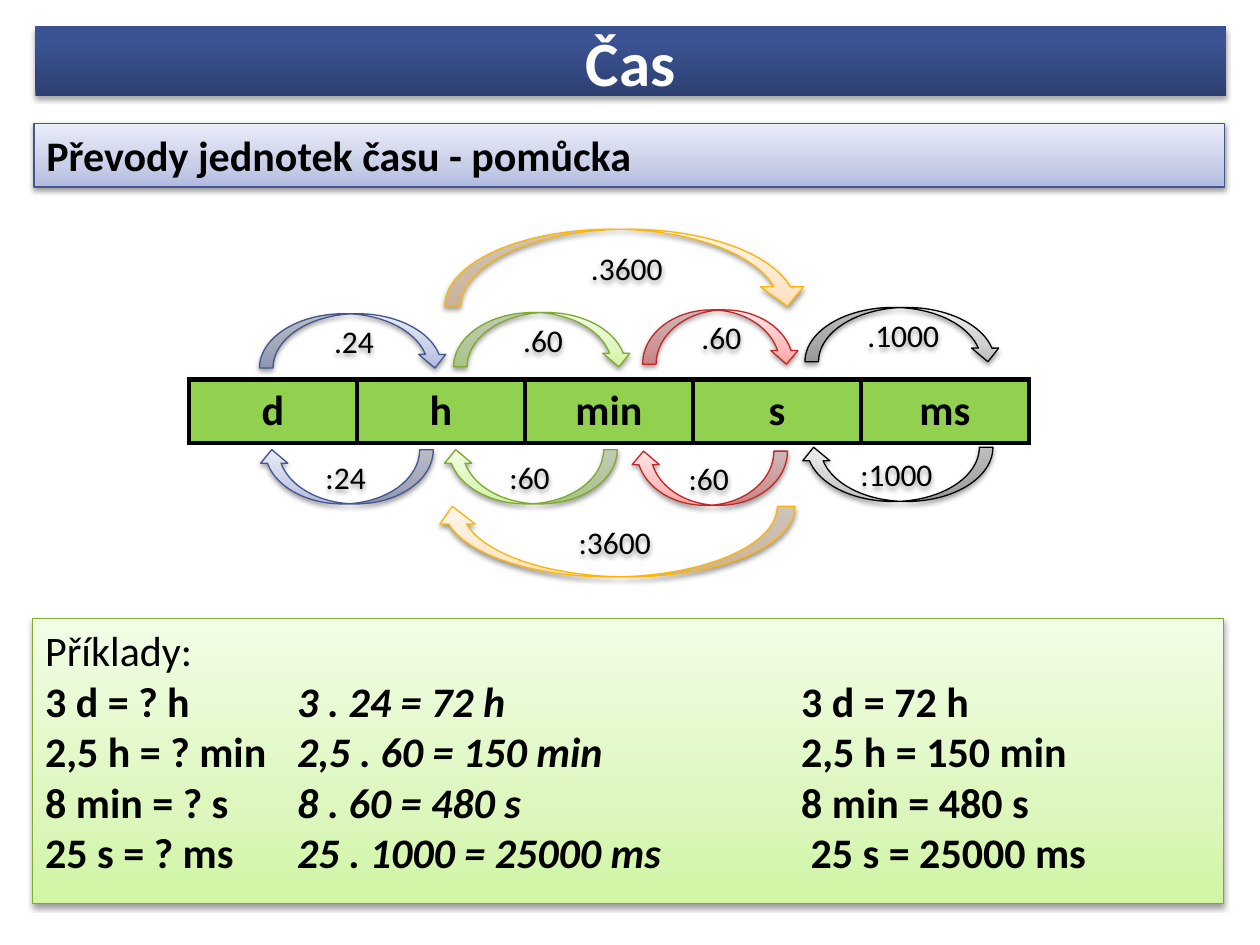
from copy import deepcopy

from lxml import etree
from pptx import Presentation
from pptx.dml.color import RGBColor
from pptx.enum.shapes import MSO_SHAPE
from pptx.enum.text import MSO_ANCHOR, PP_ALIGN
from pptx.oxml.ns import qn
from pptx.util import Pt

RECTANGLE = MSO_SHAPE.RECTANGLE
DOWN_ARROW = MSO_SHAPE.CURVED_DOWN_ARROW
UP_ARROW = MSO_SHAPE.CURVED_UP_ARROW
TOP, MIDDLE = MSO_ANCHOR.TOP, MSO_ANCHOR.MIDDLE
LEFT, CENTER = PP_ALIGN.LEFT, PP_ALIGN.CENTER

FONT = "Calibri"
BLACK = RGBColor(0x00, 0x00, 0x00)
WHITE = RGBColor(0xFF, 0xFF, 0xFF)
CELL_GREEN = RGBColor(0x92, 0xD0, 0x50)
BLUE_LINE = RGBColor(0x44, 0x57, 0x8C)
GREEN_LINE = RGBColor(0x82, 0xA9, 0x2F)
RED_LINE = RGBColor(0xC2, 0x28, 0x29)
ORANGE_LINE = RGBColor(0xFE, 0xB6, 0x04)


def gradient(middle, *colors):
    positions = (0, middle, 1)
    return [(p, RGBColor.from_string(c)) for p, c in zip(positions, colors)]


NAVY = gradient(0.8, "2D4071", "3B5393", "395295"), None
BLUE = gradient(0.35, "B2BBE0", "C9CFE8", "EAECF7"), BLUE_LINE
GREEN = gradient(0.35, "D0F5A3", "DDF7BF", "F2FDE6"), GREEN_LINE
RED = gradient(0.35, "FFA3A3", "FFBEBE", "FFE6E6"), RED_LINE
GRAY = gradient(0.35, "BDBDBD", "D1D1D1", "EEEEEE"), BLACK
ORANGE = gradient(0.35, "FFDFBC", "FFE8D0", "FFF6ED"), ORANGE_LINE

UNITS = ["d", "h", "min", "s", "ms"]

MULTIPLICATIONS = [
    (".24", BLUE, 148.3, 179.3, 108, 31),
    (".60", GREEN, 259.2, 178.6, 102.2, 31),
    (".60", RED, 367.2, 177.1, 90, 31),
    (".1000", GRAY, 460, 175.7, 112.3, 31),
    (".3600", ORANGE, 254.2, 131, 208, 43.9),
]
DIVISIONS = [
    (":24", BLUE, 147.6, 257, 100, 31),
    (":60", GREEN, 252.7, 257, 100, 31),
    (":60", RED, 360, 257.8, 90, 31),
    (":1000", GRAY, 457.2, 255.6, 110.2, 31),
    (":3600", ORANGE, 248.4, 289.4, 205.9, 40.3),
]
EXAMPLES = [
    ("3 d = ? h", "3 . 24 = 72 h", "3 d = 72 h"),
    ("2,5 h = ? min", "2,5 . 60 = 150 min", "2,5 h = 150 min"),
    ("8 min = ? s", "8 . 60 = 480 s", "8 min = 480 s"),
    ("25 s = ? ms", "25 . 1000 = 25000 ms", " 25 s = 25000 ms"),
]
EXAMPLE_TABS = (144, 432)


def set_font(paragraph, size, color=BLACK, bold=False):
    font = paragraph.font
    font.name, font.size, font.bold = FONT, Pt(size), bold
    font.color.rgb = color


def add_shadow(shape, alpha, distance):
    shape.shadow.inherit = False
    effects = shape._element.spPr.find(qn("a:effectLst"))
    shadow = etree.SubElement(
        effects, qn("a:outerShdw"), blurRad=str(Pt(3.1)), dist=str(Pt(distance)),
        dir="5400000", rotWithShape="0")
    color = etree.SubElement(shadow, qn("a:srgbClr"), val=str(BLACK))
    etree.SubElement(color, qn("a:alpha"), val=str(alpha * 1000))


def fill_gradient(shape, stops):
    shape.fill.gradient()
    shape.fill.gradient_angle = 90
    stop_list = shape._element.spPr.find(qn("a:gradFill")).find(qn("a:gsLst"))
    stop_list.append(deepcopy(stop_list[0]))
    for stop, (position, color) in zip(shape.fill.gradient_stops, stops):
        stop.position = position
        stop.color.rgb = color


def add_panel(slide, kind, box, colors, anchor, alpha=38, distance=1.6):
    panel = slide.shapes.add_shape(kind, *map(Pt, box))
    stops, line_color = colors
    fill_gradient(panel, stops)
    if line_color is None:
        panel.line.fill.background()
    else:
        panel.line.color.rgb = line_color
        panel.line.width = Pt(0.75)
    add_shadow(panel, alpha, distance)
    panel.text_frame.word_wrap = True
    panel.text_frame.vertical_anchor = anchor
    return panel


def write_line(panel, text, size, align, color=BLACK, bold=False):
    line = panel.text_frame.paragraphs[0]
    line.text = text
    line.alignment = align
    set_font(line, size, color, bold)


def add_conversion(slide, kind, label, colors, box):
    arrow = add_panel(slide, kind, box, colors, MIDDLE)
    write_line(arrow, label, 18, CENTER)
    if kind == UP_ARROW:
        arrow._element.spPr.find(qn("a:xfrm")).set("flipH", "1")
    return arrow


def add_cell_borders(cell):
    properties = cell._tc.get_or_add_tcPr()
    for side in ("lnL", "lnR", "lnT", "lnB"):
        border = etree.SubElement(properties, qn(f"a:{side}"), w=str(Pt(3)))
        fill = etree.SubElement(border, qn("a:solidFill"))
        etree.SubElement(fill, qn("a:srgbClr"), val=str(BLACK))


def add_unit_table(slide):
    units = slide.shapes.add_table(
        1, len(UNITS), Pt(108), Pt(216.7), Pt(96 * len(UNITS)), Pt(36)).table
    for cell, unit in zip(units.rows[0].cells, UNITS):
        add_cell_borders(cell)
        cell.fill.solid()
        cell.fill.fore_color.rgb = CELL_GREEN
        cell.text = unit
        label = cell.text_frame.paragraphs[0]
        label.alignment = CENTER
        set_font(label, 24, bold=True)


def add_tab_stops(paragraph):
    tabs = etree.Element(qn("a:tabLst"))
    for position in EXAMPLE_TABS:
        etree.SubElement(tabs, qn("a:tab"), pos=str(Pt(position)), algn="l")
    paragraph._p.get_or_add_pPr().insert(0, tabs)


def add_examples(slide):
    panel = add_panel(slide, RECTANGLE, (18.7, 353.5, 680.4, 162.7), GREEN, TOP)
    write_line(panel, "Příklady:", 24, LEFT)
    for question, calculation, answer in EXAMPLES:
        example = panel.text_frame.add_paragraph()
        example.alignment = LEFT
        set_font(example, 24, bold=True)
        add_tab_stops(example)
        example.add_run().text = question + "\t"
        working = example.add_run()
        working.text = calculation
        working.font.italic = True
        example.add_run().text = "\t" + answer


def main():
    presentation = Presentation()
    presentation.slide_width, presentation.slide_height = Pt(720), Pt(540)
    slide = presentation.slides.add_slide(presentation.slide_layouts[6])

    title = add_panel(slide, RECTANGLE, (20.2, 15.1, 680.4, 39.6), NAVY, MIDDLE, 35, 1.8)
    write_line(title, "Čas", 36, CENTER, WHITE, bold=True)
    subtitle = add_panel(slide, RECTANGLE, (19.4, 70.4, 680.4, 36.5), BLUE, TOP)
    write_line(subtitle, "Převody jednotek času - pomůcka", 24, LEFT, bold=True)
    add_examples(slide)
    add_unit_table(slide)

    for label, colors, *box in MULTIPLICATIONS:
        arrow = add_conversion(slide, DOWN_ARROW, label, colors, box)
        if colors is ORANGE:
            arrow.adjustments[0] = 0.21
            arrow.adjustments[1] = 0.56
    for label, colors, *box in DIVISIONS:
        add_conversion(slide, UP_ARROW, label, colors, box)

    presentation.save("out.pptx")


if __name__ == "__main__":
    main()
